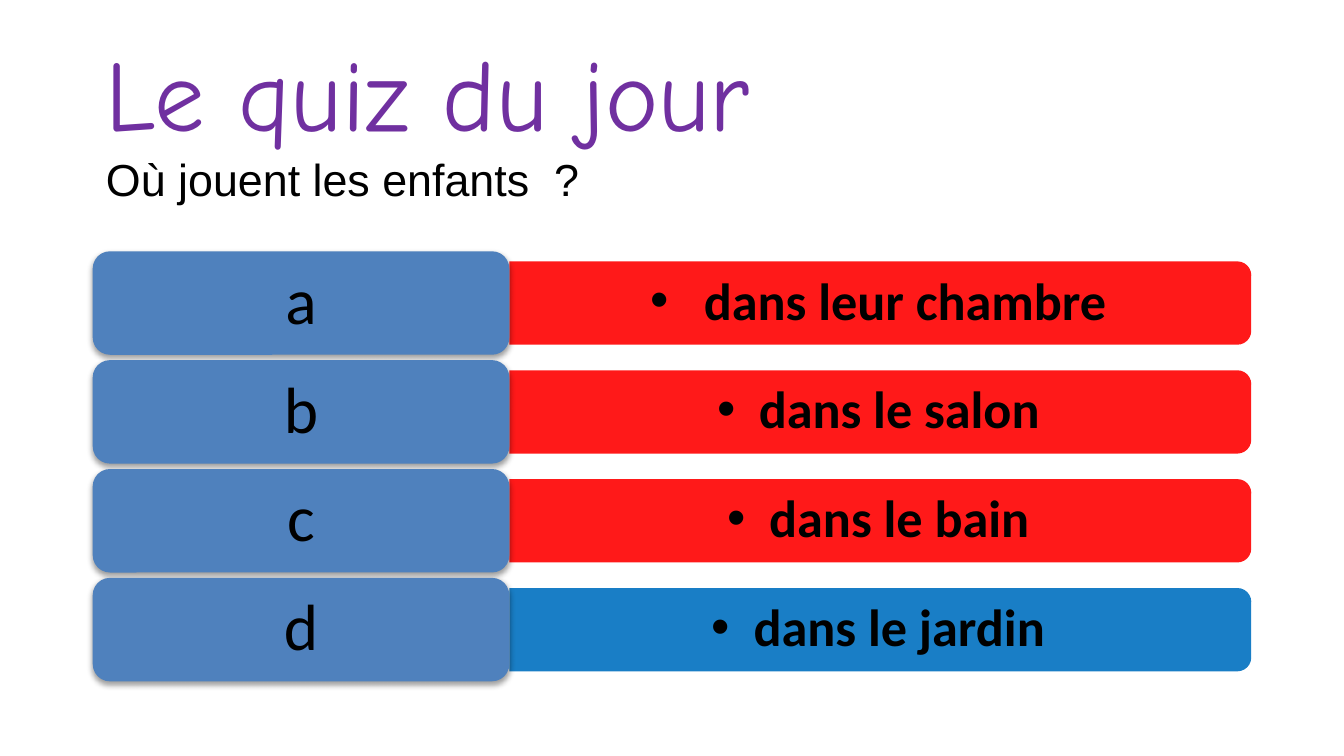
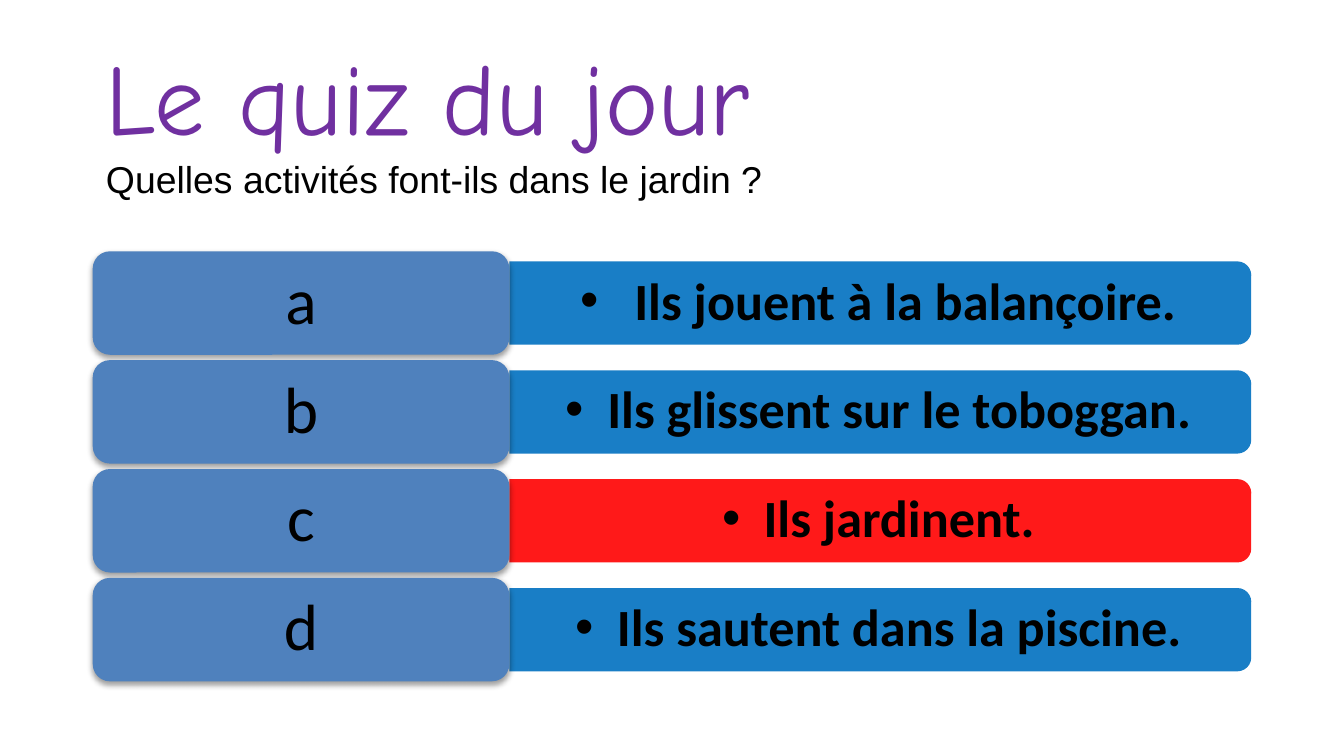
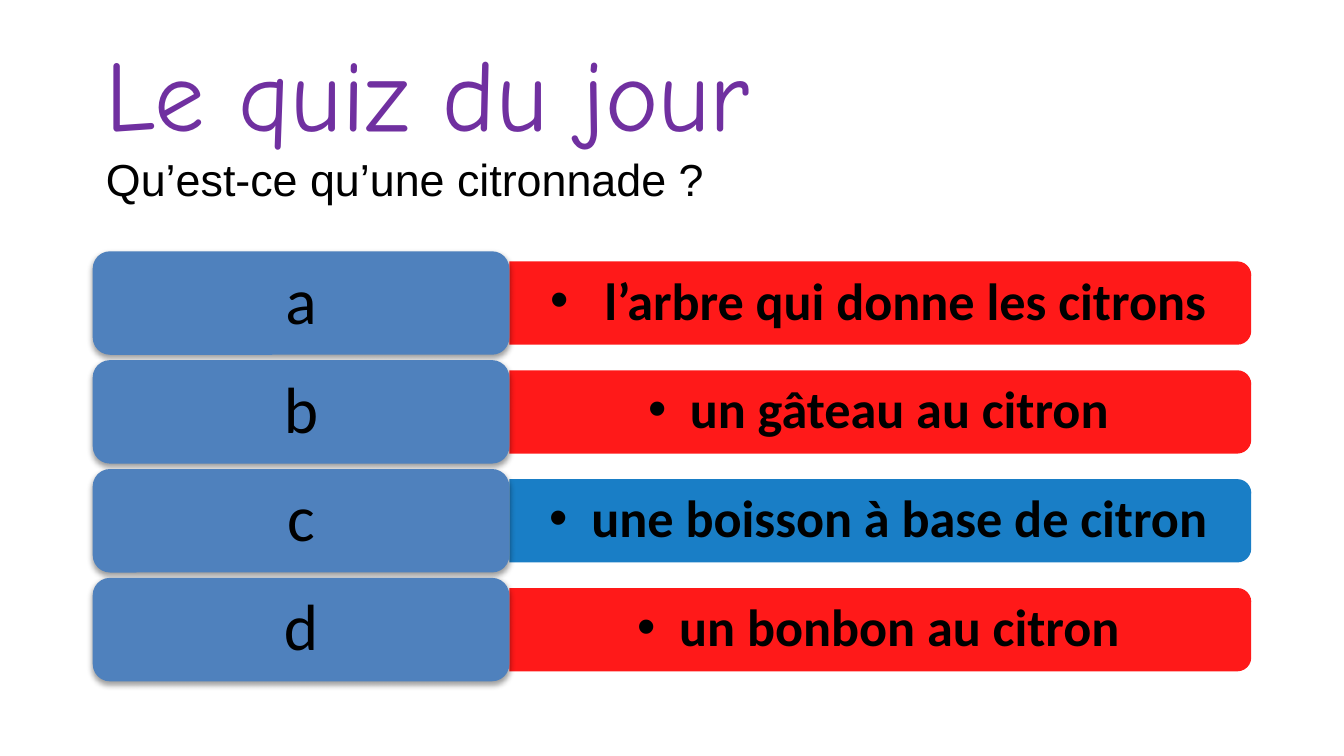
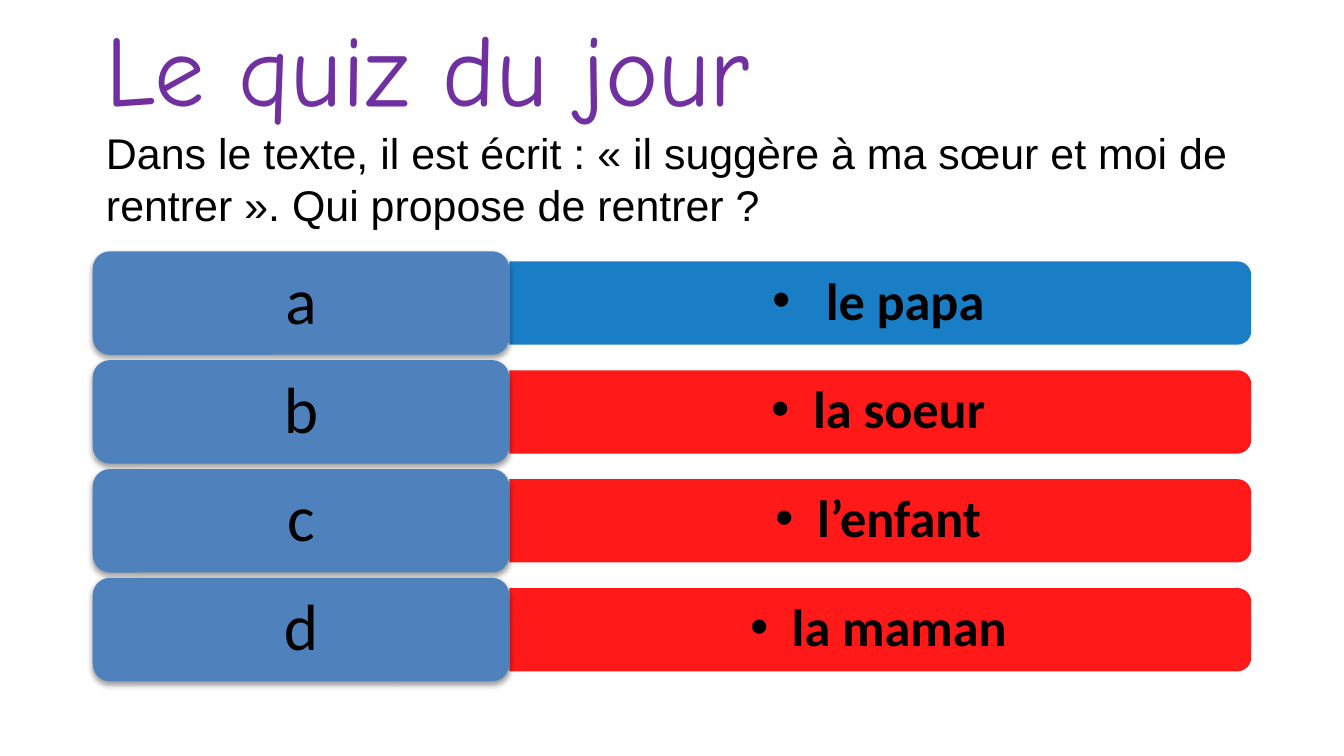
from lxml.etree import SubElement
from pptx import Presentation
from pptx.dml.color import RGBColor
from pptx.enum.shapes import MSO_SHAPE as Shape
from pptx.enum.text import MSO_ANCHOR as Anchor, PP_ALIGN as Align
from pptx.oxml.ns import qn
from pptx.util import Inches, Pt

PURPLE = RGBColor(0x70, 0x30, 0xA0)
BLACK = RGBColor(0, 0, 0)
RED = RGBColor(0xFF, 0, 0)
BLUE = RGBColor(0, 0x70, 0xC0)
STEEL = RGBColor(0x4F, 0x81, 0xBD)

LEFT = 0.69
FIRST_ROW, ROW_STEP = 1.87, 0.81
LABEL_WIDTH, LABEL_HEIGHT = 3.1, 0.77
BAR_LENGTH, BAR_HEIGHT = 5.52, 0.62
ANSWER_WIDTH, ANSWER_HEIGHT = 5.49, 0.56
ANSWER_LEFT = LEFT + LABEL_WIDTH

QUIZZES = [
    ("Où jouent les enfants  ?", 24, [
        (" dans leur chambre", RED),
        ("dans le salon", RED),
        ("dans le bain", RED),
        ("dans le jardin", BLUE),
    ]),
    ("Quelles activités font-ils dans le jardin ?", 20, [
        (" Ils jouent à la balançoire.", BLUE),
        ("Ils glissent sur le toboggan.", BLUE),
        ("Ils jardinent.", RED),
        ("Ils sautent dans la piscine.", BLUE),
    ]),
    ("Qu’est-ce qu’une citronnade ?", 24, [
        (" l’arbre qui donne les citrons", RED),
        ("un gâteau au citron", RED),
        ("une boisson à base de citron", BLUE),
        ("un bonbon au citron", RED),
    ]),
    ("Dans le texte, il est écrit : « il suggère à ma sœur et moi de rentrer ». "
     "Qui propose de rentrer ?", 23, [
        (" le papa", BLUE),
        ("la soeur", RED),
        ("l’enfant", RED),
        ("la maman", RED),
    ]),
]


class QuizDeck:
    def __init__(self):
        self.presentation = Presentation()
        self.presentation.slide_width = Inches(10)
        self.presentation.slide_height = Inches(10 * 9 / 16)
        self.slide = None

    def new_slide(self):
        self.slide = self.presentation.slides.add_slide(self.presentation.slide_layouts[6])

    def style(self, font, size, name, color=BLACK, bold=False):
        font.size, font.name, font.bold = Pt(size), name, bold
        font.color.rgb = color

    def frame(self, shape, side, edge):
        frame = shape.text_frame
        frame.word_wrap = True
        frame.vertical_anchor = Anchor.MIDDLE
        frame.margin_left = frame.margin_right = Inches(side)
        frame.margin_top = frame.margin_bottom = Inches(edge)
        return frame

    def centred(self, shape, text, size, side, edge, bold=False):
        paragraph = self.frame(shape, side, edge).paragraphs[0]
        paragraph.text = text
        paragraph.alignment = Align.CENTER
        paragraph.line_spacing = 0.9
        self.style(paragraph.font, size, "Calibri", bold=bold)
        return paragraph

    def text_box(self, left, top, width, height):
        return self.slide.shapes.add_textbox(
            Inches(left), Inches(top), Inches(width), Inches(height))

    def block(self, kind, left, top, width, height, color):
        block = self.slide.shapes.add_shape(
            kind, Inches(left), Inches(top), Inches(width), Inches(height))
        block.shadow.inherit = False
        block.fill.solid()
        block.fill.fore_color.rgb = color
        block.line.fill.background()
        return block

    def title(self, question, size):
        heading = self.frame(self.text_box(LEFT, 0.2, 8.62, 1.35), 0.1, 0.05).paragraphs[0]
        name = heading.add_run()
        name.text = "Le quiz du jour"
        self.style(name.font, 54, "Comic Neue", PURPLE)
        heading.add_line_break()
        prompt = heading.add_run()
        prompt.text = question
        self.style(prompt.font, size, "Arial")

    def bar(self, top, color):
        middle = top + LABEL_HEIGHT / 2
        bar = self.block(Shape.ROUND_2_SAME_RECTANGLE,
                         ANSWER_LEFT + (BAR_LENGTH - BAR_HEIGHT) / 2,
                         middle - BAR_LENGTH / 2, BAR_HEIGHT, BAR_LENGTH, color)
        bar.rotation = 90
        tint = bar.fill._xPr.find(qn("a:solidFill"))[0]
        SubElement(tint, qn("a:alpha"), val="90000")

    def answer(self, top, text):
        box = self.text_box(ANSWER_LEFT, top + (LABEL_HEIGHT - ANSWER_HEIGHT) / 2,
                            ANSWER_WIDTH, ANSWER_HEIGHT)
        paragraph = self.centred(box, text, 28, 0.12, 0.06, bold=True)
        paragraph.level = 1
        properties = paragraph._p.get_or_add_pPr()
        properties.set("marL", str(Inches(0.31)))
        properties.set("indent", str(-Inches(0.31)))
        bullet_font = properties.makeelement(qn("a:buFont"), {"typeface": "Arial"})
        bullet = properties.makeelement(qn("a:buChar"), {"char": "•"})
        properties.find(qn("a:lnSpc")).addnext(bullet_font)
        bullet_font.addnext(bullet)

    def label(self, top, letter):
        label = self.block(Shape.ROUNDED_RECTANGLE, LEFT, top,
                           LABEL_WIDTH, LABEL_HEIGHT, STEEL)
        effects = label._element.spPr.find(qn("a:effectLst"))
        shadow = SubElement(effects, qn("a:outerShdw"), blurRad=str(Pt(3.1)),
                            dist=str(Pt(1.6)), dir="5400000", rotWithShape="0")
        shade = SubElement(shadow, qn("a:srgbClr"), val=str(BLACK))
        SubElement(shade, qn("a:alpha"), val="38000")
        self.centred(label, letter, 35, 0.19, 0.11)

    def quiz(self, question, size, answers):
        self.new_slide()
        self.title(question, size)
        for row, (letter, (text, color)) in enumerate(zip("abcd", answers)):
            top = FIRST_ROW + row * ROW_STEP
            self.bar(top, color)
            self.answer(top, text)
            self.label(top, letter)


def main():
    deck = QuizDeck()
    for question, size, answers in QUIZZES:
        deck.quiz(question, size, answers)
    deck.presentation.save("out.pptx")


if __name__ == "__main__":
    main()
